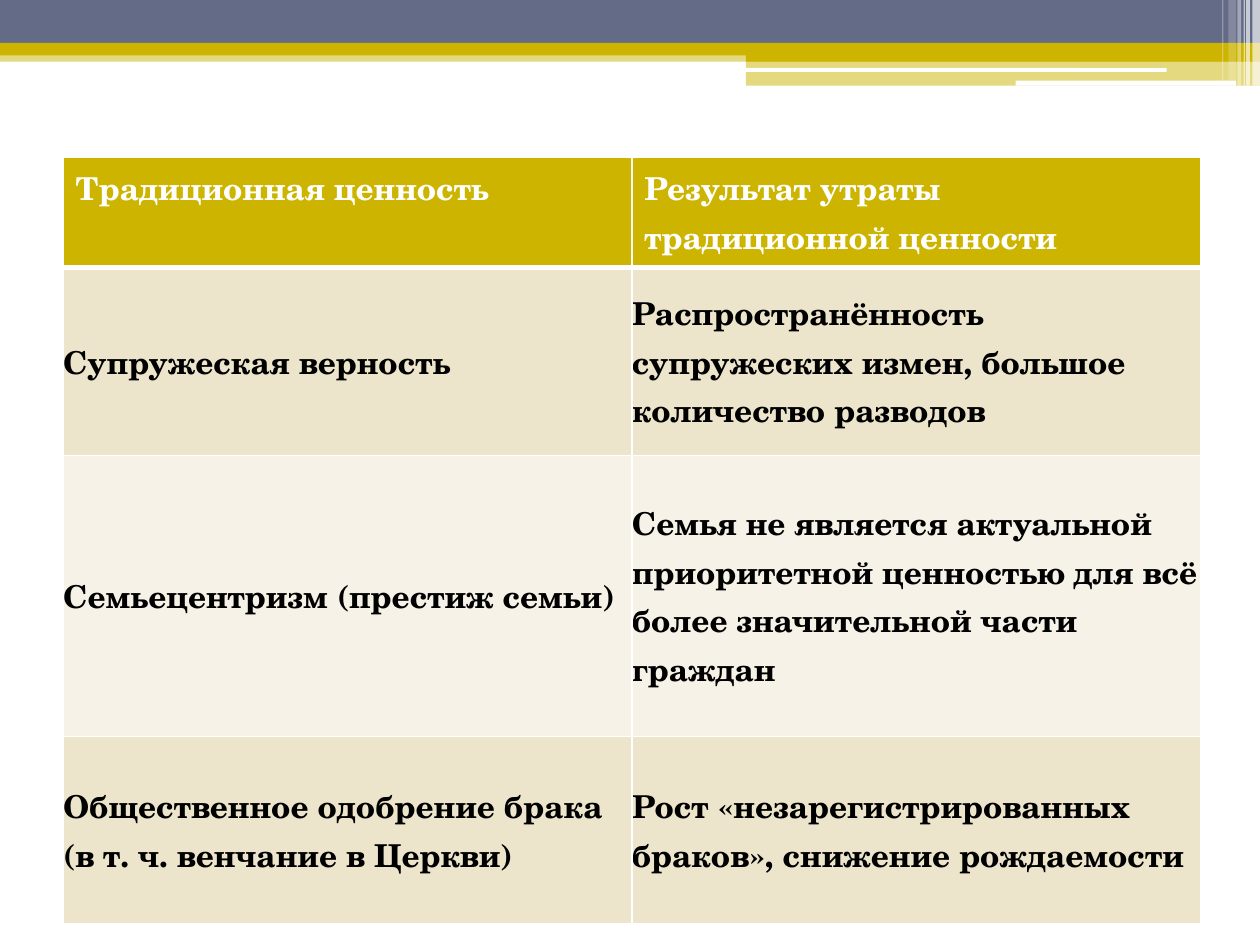
from pptx import Presentation
from pptx.dml.color import RGBColor
from pptx.enum.shapes import MSO_SHAPE as Shape
from pptx.enum.text import MSO_ANCHOR as Anchor
from pptx.oxml import parse_xml
from pptx.oxml.ns import nsdecls, qn
from pptx.util import Inches, Pt
from lxml.etree import SubElement

COLORS = {"slate": "646B86", "gold": "CCB400", "white": "FFFFFF",
          "black": "000000", "sand": "ECE5CC", "cream": "F6F2E7"}
FONT = "TeX Gyre Schola"
WIDTH, HEIGHT = 10, 7.5

# Header bands: left, top, width, height, colour, opacity in percent
BANDS = [
    (0, 0.4, WIDTH, 0.09, "gold", 50),
    (0, 0, WIDTH, 0.34, "slate", 100),
    (0, 0.34, WIDTH, 0.1, "gold", 100),
    (5.92, 0.39, 4.08, 0.1, "gold", 100),
    (5.92, 0.48, 4.08, 0.2, "gold", 50),
]
# Rounded white lines: left, top, width, height
LINES = [(5.91, 0.54, 3.35, 0.03), (8.06, 0.64, 1.75, 0.04)]
# Vertical stripes at the right edge: left, width, height, opacity
STRIPES = [(9.94, 0.06, 0.68, 65), (9.89, 0.03, 0.68, 65),
           (9.87, 0.01, 0.68, 60), (9.82, 0.03, 0.68, 40),
           (9.75, 0.06, 0.64, 20), (9.7, 0.01, 0.64, 30)]

# Each cell is a list of paragraphs
ROWS = [
    (["Традиционная ценность"], ["Результат утраты традиционной ценности"]),
    (["Супружеская верность"],
     ["Распространённость супружеских измен, большое количество разводов"]),
    (["Семьецентризм (престиж семьи)"],
     ["Семья не является актуальной приоритетной ценностью для всё более "
      "значительной части граждан"]),
    (["Общественное одобрение брака", "(в т. ч. венчание в Церкви)"],
     ["Рост «незарегистрированных браков», снижение рождаемости"]),
]
ROW_HEIGHTS = [0.5, 1.49, 2.23, 1.49]
TABLE_LEFT, TABLE_TOP, TABLE_WIDTH = 0.5, 1.25, 9.03


def color(name):
    return RGBColor.from_string(COLORS[name])


def add_band(slide, kind, left, top, width, height, fill, opacity=100):
    shape = slide.shapes.add_shape(
        kind, Inches(left), Inches(top), Inches(width), Inches(height))
    shape.shadow.inherit = False
    shape.line.fill.background()
    shape.fill.solid()
    shape.fill.fore_color.rgb = color(fill)
    if opacity < 100:
        value = shape.fill._xPr.find(qn("a:solidFill"))[0]
        SubElement(value, qn("a:alpha")).set("val", str(opacity * 1000))


def set_borders(cell, widths):
    properties = cell._tc.get_or_add_tcPr()
    for index, (side, width) in enumerate(widths.items()):
        properties.insert(index, parse_xml(
            f'<a:{side} {nsdecls("a")} w="{Pt(width)}"><a:solidFill>'
            f'<a:srgbClr val="{COLORS["white"]}"/></a:solidFill></a:{side}>'))


def fill_cell(cell, paragraphs, row):
    header = row == 0
    cell.fill.solid()
    cell.fill.fore_color.rgb = color(
        "gold" if header else "sand" if row % 2 else "cream")
    set_borders(cell, {"lnL": 1, "lnR": 1, "lnT": 3 if row == 1 else 1,
                       "lnB": 3 if header else 1})
    if not header:
        cell.vertical_anchor = Anchor.MIDDLE
        cell.margin_left = cell.margin_right = 0
        cell.margin_top = cell.margin_bottom = 0
    frame = cell.text_frame
    for index, text in enumerate(paragraphs):
        paragraph = frame.add_paragraph() if index else frame.paragraphs[0]
        run = paragraph.add_run()
        run.text = text
        run.font.name = FONT
        run.font.size = Pt(18)
        run.font.bold = True
        run.font.color.rgb = color("white" if header else "black")


def main():
    presentation = Presentation()
    presentation.slide_width = Inches(WIDTH)
    presentation.slide_height = Inches(HEIGHT)
    slide = presentation.slides.add_slide(presentation.slide_layouts[6])

    # Header decoration
    for band in BANDS:
        add_band(slide, Shape.RECTANGLE, *band)
    for line in LINES:
        add_band(slide, Shape.ROUNDED_RECTANGLE, *line, "white")
    for left, width, height, opacity in STRIPES:
        add_band(slide, Shape.RECTANGLE, left, 0, width, height, "white", opacity)

    # Table of values
    table = slide.shapes.add_table(
        len(ROWS), len(ROWS[0]), Inches(TABLE_LEFT), Inches(TABLE_TOP),
        Inches(TABLE_WIDTH), Inches(sum(ROW_HEIGHTS))).table
    for row, (height, texts) in enumerate(zip(ROW_HEIGHTS, ROWS)):
        table.rows[row].height = Inches(height)
        for column, paragraphs in enumerate(texts):
            fill_cell(table.cell(row, column), paragraphs, row)

    presentation.save("out.pptx")


if __name__ == "__main__":
    main()
